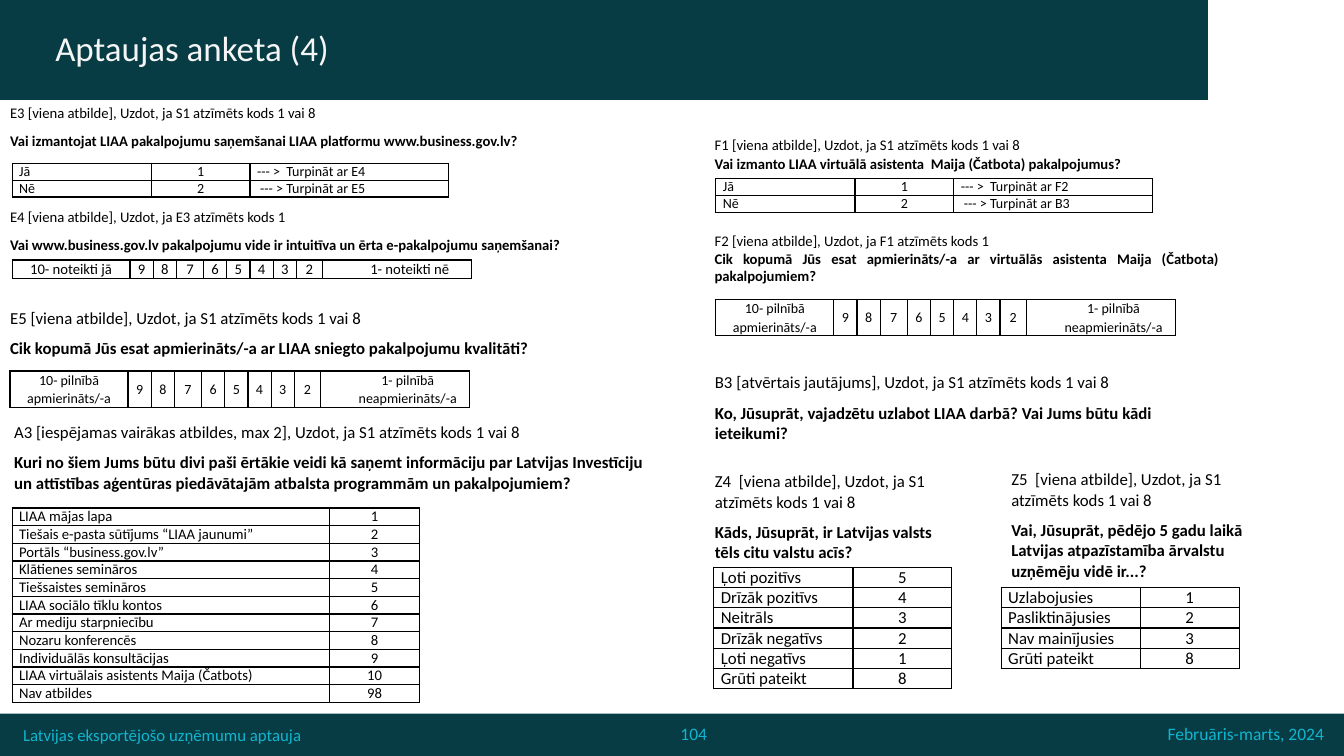
from lxml.etree import SubElement
from pptx import Presentation
from pptx.dml.color import RGBColor
from pptx.enum.shapes import MSO_SHAPE
from pptx.enum.text import MSO_ANCHOR, PP_ALIGN
from pptx.oxml.ns import qn
from pptx.util import Inches, Pt

TEAL = RGBColor(0x07, 0x3C, 0x45)
CYAN = RGBColor(0x11, 0xB5, 0xCE)
OFF_WHITE = RGBColor(0xF5, 0xF5, 0xF5)
BLACK = RGBColor(0, 0, 0)

NO_STYLE = "{2D5ABB26-0587-4C30-8999-92F81FD0307C}"
SCALE_COLS = [1.17, 0.23, 0.23, 0.27, 0.23, 0.23, 0.23, 0.23, 0.26, 1.48]
YES_NO_COLS = [1.38, 0.98, 1.97]
RATING_COLS = [1.38, 0.98]


def write(p, text, size=12, color=BLACK, font="Calibri", bold=False,
          align=PP_ALIGN.LEFT, spacing=None, before=None, indent=None):
    p.alignment = align
    if spacing:
        p.line_spacing = spacing
    if before is not None:
        p.space_before = Pt(before)
    if indent:
        p._p.get_or_add_pPr().set("marL", str(Inches(indent)))
    r = p.add_run()
    r.text = text
    r.font.size = Pt(size)
    r.font.name = font
    r.font.bold = bold
    r.font.color.rgb = color


class SurveySlide:
    def __init__(self, prs):
        self.s = prs.slides.add_slide(prs.slide_layouts[6])

    def bar(self, x, y, w, h):
        sp = self.s.shapes.add_shape(
            MSO_SHAPE.RECTANGLE, Inches(x), Inches(y), Inches(w), Inches(h))
        sp.shadow.inherit = False
        sp.fill.solid()
        sp.fill.fore_color.rgb = TEAL
        sp.line.fill.background()

    def text(self, x, y, w, h, lines, anchor=MSO_ANCHOR.TOP):
        sp = self.s.shapes.add_textbox(Inches(x), Inches(y), Inches(w), Inches(h))
        tf = sp.text_frame
        tf.word_wrap = True
        tf.vertical_anchor = anchor
        for i, (text, fmt) in enumerate(lines):
            p = tf.add_paragraph() if i else tf.paragraphs[0]
            write(p, text, **fmt)

    def table(self, x, y, cols, heights):
        frame = self.s.shapes.add_table(
            len(heights), len(cols), Inches(x), Inches(y),
            Inches(sum(cols)), Inches(sum(heights)))
        table = frame.table
        table.first_row = table.horz_banding = False
        table._tbl.tblPr.find(qn("a:tableStyleId")).text = NO_STYLE
        for column, width in zip(table.columns, cols):
            column.width = Inches(width)
        for row, height in zip(table.rows, heights):
            row.height = Inches(height)
        return table

    def border(self, cell):
        tcPr = cell._tc.get_or_add_tcPr()
        for side in ("a:lnL", "a:lnR", "a:lnT", "a:lnB"):
            ln = SubElement(tcPr, qn(side), w=str(Pt(1)))
            fill = SubElement(ln, qn("a:solidFill"))
            SubElement(fill, qn("a:srgbClr"), val=str(BLACK))

    def boxed(self, cell, text, anchor=MSO_ANCHOR.TOP, **fmt):
        self.border(cell)
        cell.fill.background()
        cell.margin_left = cell.margin_right = Inches(0.07)
        cell.margin_top = cell.margin_bottom = 0
        cell.vertical_anchor = anchor
        write(cell.text_frame.paragraphs[0], text, **fmt)

    def question(self, x, y, w, heights, code, question, size=12):
        table = self.table(x, y, [w], heights)
        for i, text in enumerate((code, question)):
            cell = table.cell(i, 0)
            cell.fill.background()
            write(cell.text_frame.paragraphs[0], text, size=size, bold=i == 1)

    def answers(self, x, y, h, cols, rows, size=12):
        table = self.table(x, y, cols, [h / len(rows)] * len(rows))
        for i, row in enumerate(rows):
            for j, text in enumerate(row):
                align = PP_ALIGN.CENTER if j == 1 else PP_ALIGN.LEFT
                self.boxed(table.cell(i, j), text, size=size, align=align)

    def scale(self, x, y, h, best, worst, size=10):
        table = self.table(x, y, SCALE_COLS, [h])
        labels = [best, *map(str, range(9, 1, -1)), worst]
        for j, text in enumerate(labels):
            self.boxed(table.cell(0, j), text, anchor=MSO_ANCHOR.MIDDLE,
                       size=size, align=PP_ALIGN.CENTER, spacing=Pt(13),
                       indent=0.25 if text == worst else None)


def main():
    prs = Presentation()
    prs.slide_width, prs.slide_height = Inches(13.33), Inches(7.5)
    s = SurveySlide(prs)
    middle = MSO_ANCHOR.MIDDLE

    s.bar(0, 7.08, 13.33, 0.42)
    s.text(5.54, 7.08, 2.68, 0.42, [
        ("104", dict(size=12.5, color=CYAN, align=PP_ALIGN.CENTER, spacing=0.9))], middle)
    s.text(-0.17, 7.08, 5.39, 0.42, [
        ("Latvijas eksportējošo uzņēmumu aptauja", dict(color=CYAN, indent=0.3))], middle)
    s.text(11.39, 7.08, 1.84, 0.42, [
        ("Februāris-marts, 2024",
         dict(size=12.5, color=CYAN, align=PP_ALIGN.RIGHT, spacing=0.9))], middle)
    s.bar(0, 0, 11.98, 0.99)
    s.text(0.45, 0, 11.53, 0.99, [
        ("Aptaujas anketa (4)", dict(size=25, color=OFF_WHITE, spacing=0.9))], middle)

    s.question(0, 0.99, 6.71, [0.26, 0.5],
               "E3 [viena atbilde], Uzdot, ja S1 atzīmēts kods 1 vai 8",
               "Vai izmantojat LIAA pakalpojumu saņemšanai LIAA platformu www.business.gov.lv?",
               size=10.5)
    s.answers(0.12, 1.62, 0.33, YES_NO_COLS, [
        ("Jā", "1", "--- >  Turpināt ar E4"),
        ("Nē", "2", " --- > Turpināt ar E5")], size=10)

    s.question(0, 2.02, 6.17, [0.23, 0.39],
               "E4 [viena atbilde], Uzdot, ja E3 atzīmēts kods 1",
               "Vai www.business.gov.lv pakalpojumu vide ir intuitīva un ērta "
               "e-pakalpojumu saņemšanai?", size=10.5)
    s.scale(0.12, 2.58, 0.17, "10- noteikti jā", "1- noteikti nē", size=10.5)

    s.question(0, 3.01, 5.68, [0.26, 0.5],
               "E5 [viena atbilde], Uzdot, ja S1 atzīmēts kods 1 vai 8",
               "Cik kopumā Jūs esat apmierināts/-a ar LIAA sniegto pakalpojumu kvalitāti?")
    satisfaction = ("10- pilnībā apmierināts/-a", "1- pilnībā neapmierināts/-a")
    s.scale(0.1, 3.68, 0.35, *satisfaction)

    s.question(0.04, 4.14, 6.59, [0.26, 0.76],
               "A3 [iespējamas vairākas atbildes, max 2], Uzdot, ja S1 atzīmēts kods 1 vai 8",
               "Kuri no šiem Jums būtu divi paši ērtākie veidi kā saņemt informāciju par "
               "Latvijas Investīciju un attīstības aģentūras piedāvātajām atbalsta "
               "programmām un pakalpojumiem?")
    s.answers(0.12, 5.04, 1.93, [3.15, 0.89], [
        ("LIAA mājas lapa", "1"),
        ("Tiešais e-pasta sūtījums “LIAA jaunumi”", "2"),
        ("Portāls “business.gov.lv”", "3"),
        ("Klātienes semināros", "4"),
        ("Tiešsaistes semināros", "5"),
        ("LIAA sociālo tīklu kontos", "6"),
        ("Ar mediju starpniecību", "7"),
        ("Nozaru konferencēs", "8"),
        ("Individuālās konsultācijas", "9"),
        ("LIAA virtuālais asistents Maija (Čatbots)", "10"),
        ("Nav atbildes", "98")], size=10.5)

    s.text(6.99, 1.3, 6.49, 0.46, [
        ("F1 [viena atbilde], Uzdot, ja S1 atzīmēts kods 1 vai 8", dict(size=10.5)),
        ("Vai izmanto LIAA virtuālā asistenta  Maija (Čatbota) pakalpojumus?",
         dict(size=10.5, bold=True, spacing=1.07))])
    s.answers(7.1, 1.77, 0.33, YES_NO_COLS, [
        ("Jā", "1", "--- >  Turpināt ar F2"),
        ("Nē", "2", " --- > Turpināt ar B3")], size=10)

    s.text(6.99, 2.25, 5.2, 0.63, [
        ("F2 [viena atbilde], Uzdot, ja F1 atzīmēts kods 1", dict(size=10.5)),
        ("Cik kopumā Jūs esat apmierināts/-a ar virtuālās asistenta Maija (Čatbota) "
         "pakalpojumiem?", dict(size=10.5, bold=True, align=PP_ALIGN.JUSTIFY))])
    s.scale(7.1, 2.97, 0.35, *satisfaction)

    s.question(6.99, 3.65, 4.78, [0.26, 0.68],
               "B3 [atvērtais jautājums], Uzdot, ja S1 atzīmēts kods 1 vai 8",
               "Ko, Jūsuprāt, vajadzētu uzlabot LIAA darbā? Vai Jums būtu kādi ieteikumi?")

    s.question(6.99, 4.63, 2.45, [0.26, 0.5],
               "Z4  [viena atbilde], Uzdot, ja S1 atzīmēts kods 1 vai 8",
               "Kāds, Jūsuprāt, ir Latvijas valsts tēls citu valstu acīs?")
    s.answers(7.08, 5.63, 1.2, RATING_COLS, [
        ("Ļoti pozitīvs", "5"),
        ("Drīzāk pozitīvs", "4"),
        ("Neitrāls", "3"),
        ("Drīzāk negatīvs", "2"),
        ("Ļoti negatīvs", "1"),
        ("Grūti pateikt", "8")])

    s.question(9.93, 4.61, 2.82, [0.26, 0.5],
               "Z5  [viena atbilde], Uzdot, ja S1 atzīmēts kods 1 vai 8",
               "Vai, Jūsuprāt, pēdējo 5 gadu laikā Latvijas atpazīstamība ārvalstu "
               "uzņēmēju vidē ir...?")
    s.answers(9.93, 5.83, 0.8, RATING_COLS, [
        ("Uzlabojusies", "1"),
        ("Pasliktinājusies", "2"),
        ("Nav mainījusies", "3"),
        ("Grūti pateikt", "8")])

    prs.save("out.pptx")


if __name__ == "__main__":
    main()
